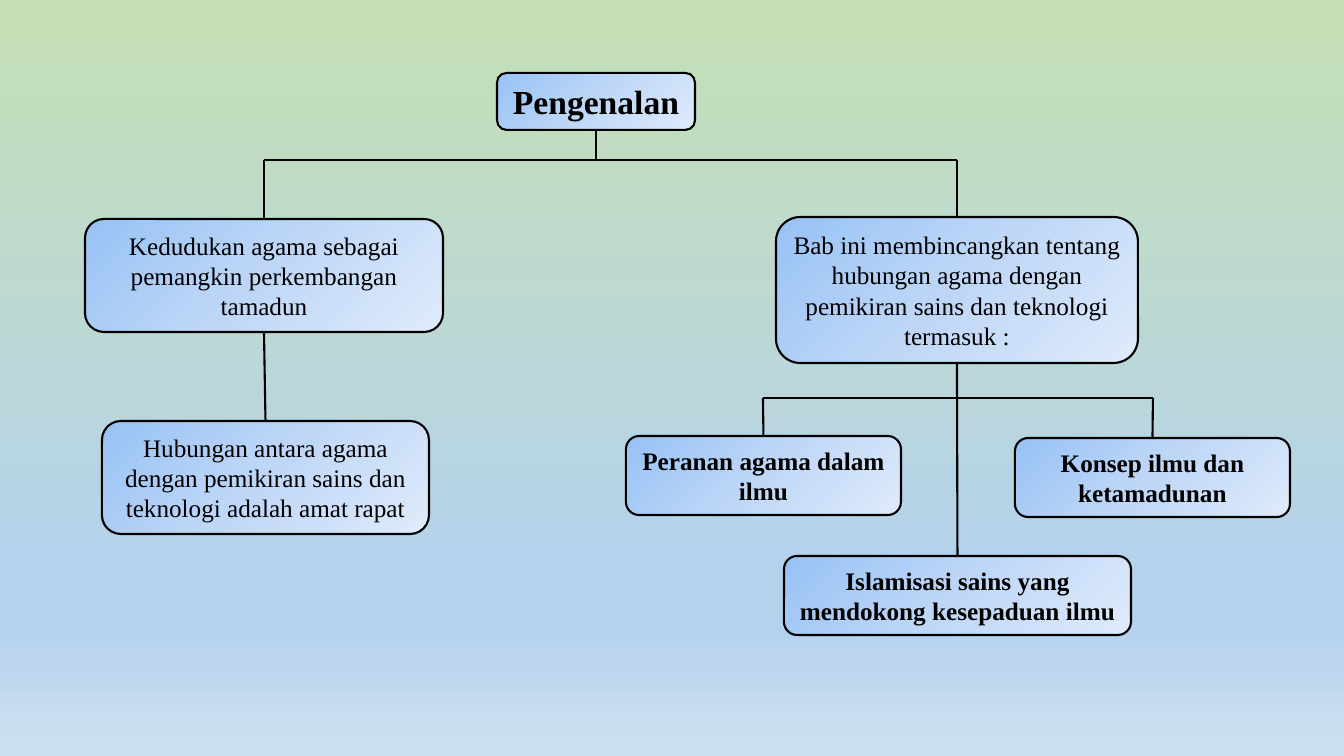
from lxml.etree import SubElement
from pptx import Presentation
from pptx.dml.color import RGBColor
from pptx.enum.shapes import MSO_CONNECTOR as Connector, MSO_SHAPE as Preset
from pptx.enum.text import MSO_ANCHOR as Anchor, PP_ALIGN as Align
from pptx.oxml.ns import qn
from pptx.util import Pt

EMU_PER_PX = 914400 / 100.8
TOP, BOTTOM = 0, 2
BLACK = "000000"
LINE_WIDTH = 1.5
BACKGROUND_STOPS = [(0, "C5E0B4"), (74, "B5D2EC"), (83, "B5D2EC"), (100, "CEE1F2")]
BOX_STOPS = [(0, "98C2F5"), (50, "BFD7F7"), (100, "DFEBFB")]


def px(length):
    """Turn pixels into EMU."""
    return round(length * EMU_PER_PX)


def color(value):
    """Turn a hex string into a colour."""
    return RGBColor.from_string(value)


def set_gradient(fill, element, stops, angle):
    """Give a fill a linear gradient with a clockwise angle."""
    fill.gradient()
    fill.gradient_angle = 360 - angle
    stop_list = element.find(".//" + qn("a:gsLst"))
    for old_stop in list(stop_list):
        stop_list.remove(old_stop)
    for position, value in stops:
        stop = SubElement(stop_list, qn("a:gs"), pos=str(position * 1000))
        SubElement(stop, qn("a:srgbClr"), val=value)


def set_line(line):
    """Draw a line in solid black."""
    line.color.rgb = color(BLACK)
    line.width = Pt(LINE_WIDTH)


def write_text(shape, text, size=18, bold=False, font="Times New Roman", value=BLACK):
    """Write centred text in a shape."""
    frame = shape.text_frame
    frame.word_wrap = True
    frame.vertical_anchor = Anchor.MIDDLE
    paragraph = frame.paragraphs[0]
    paragraph.alignment = Align.CENTER
    run = paragraph.add_run()
    run.text = text
    run.font.name = font
    run.font.size = Pt(size)
    run.font.bold = bold
    run.font.color.rgb = color(value)


def add_box(slide, bounds, text, **text_format):
    """Add a rounded gradient box with text."""
    shape = slide.shapes.add_shape(Preset.ROUNDED_RECTANGLE, *map(px, bounds))
    shape.shadow.inherit = False
    set_gradient(shape.fill, shape.element, BOX_STOPS, 45)
    set_line(shape.line)
    write_text(shape, text, **text_format)
    return shape


def add_line(slide, start=(0, 0), end=(0, 0), above=None, below=None):
    """Add a line, joined to the box above or below it when given."""
    points = map(px, (*start, *end))
    connector = slide.shapes.add_connector(Connector.STRAIGHT, *points)
    if above is not None:
        connector.begin_connect(above, BOTTOM)
    if below is not None:
        connector.end_connect(below, TOP)
    set_line(connector.line)
    SubElement(connector.element.spPr, qn("a:effectLst"))


def center_x(shape):
    """Return the horizontal middle of a shape in pixels."""
    return round((shape.left + shape.width / 2) / EMU_PER_PX)


def add_bracket(slide, children, y):
    """Add a horizontal bar with a drop to each child at its ends."""
    ends = [(center_x(child), y) for child in children]
    add_line(slide, *ends)
    for child, end in zip(children, ends):
        add_line(slide, end, below=child)


def main():
    """Build the tree of the introduction."""
    presentation = Presentation()
    presentation.slide_width, presentation.slide_height = px(1344), px(756)
    slide = presentation.slides.add_slide(presentation.slide_layouts[6])
    set_gradient(slide.background.fill, slide.element, BACKGROUND_STOPS, 90)

    introduction = add_box(slide, (497, 73, 198, 57), "Pengenalan", size=24, bold=True)
    position = add_box(slide, (85, 219, 358, 113),
                       "Kedudukan agama sebagai pemangkin perkembangan tamadun")
    relation = add_box(slide, (102, 421, 327, 113),
                       "Hubungan antara agama dengan pemikiran sains dan teknologi adalah amat rapat")
    chapter = add_box(slide, (776, 217, 362, 146),
                      "Bab ini membincangkan tentang hubungan agama dengan "
                      "pemikiran sains dan teknologi termasuk :")
    concept = add_box(slide, (1015, 438, 275, 79), "Konsep ilmu dan ketamadunan", bold=True)
    role = add_box(slide, (626, 436, 275, 79), "Peranan agama dalam ilmu", bold=True)
    islamisation = add_box(slide, (784, 556, 347, 79),
                           "Islamisasi sains yang mendokong kesepaduan ilmu", bold=True)

    add_line(slide, end=(center_x(introduction), 160), above=introduction)
    add_bracket(slide, (position, chapter), 160)
    add_line(slide, above=position, below=relation)
    add_line(slide, above=chapter, below=islamisation)
    add_bracket(slide, (role, concept), 398)

    presentation.save("out.pptx")


if __name__ == "__main__":
    main()
